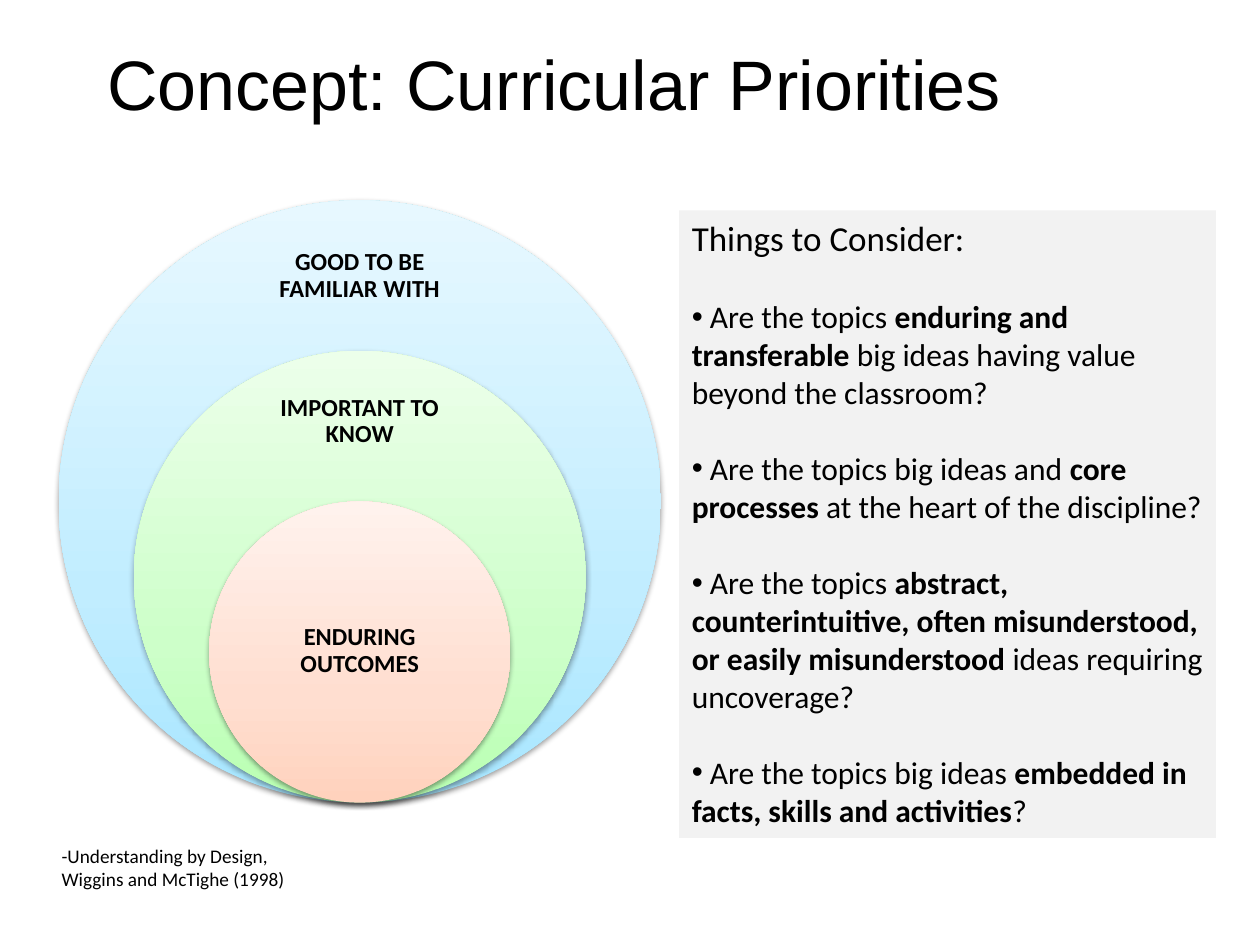
"""Build the Curricular Priorities slide: nested circles beside a list of questions."""
from lxml import etree
from pptx import Presentation
from pptx.dml.color import RGBColor
from pptx.enum.shapes import MSO_SHAPE
from pptx.enum.text import MSO_ANCHOR, MSO_AUTO_SIZE, PP_ALIGN
from pptx.oxml import parse_xml
from pptx.oxml.ns import nsdecls, qn
from pptx.util import Inches, Pt

OVAL = MSO_SHAPE.OVAL
TOP, MIDDLE = MSO_ANCHOR.TOP, MSO_ANCHOR.MIDDLE
LEFT, CENTER = PP_ALIGN.LEFT, PP_ALIGN.CENTER
NO_FIT = MSO_AUTO_SIZE.NONE

COLORS = {
    "text": "000000",
    "panel": "F2F2F2",
    "blue": ("A7E6FF", "C1EDFF", "E7F8FF"),
    "green": ("B9FFB2", "CDFFC9", "ECFFEA"),
    "peach": ("FFD2BD", "FFDED0", "FFF2ED"),
}
SHADOW = (
    f'<a:outerShdw {nsdecls("a")} blurRad="40000" dist="20000" dir="5400000" rotWithShape="0">'
    '<a:srgbClr val="000000"><a:alpha val="38000"/></a:srgbClr></a:outerShdw>'
)

prs = Presentation()
prs.slide_width, prs.slide_height = Inches(10), Inches(7.5)
COL, ROW = prs.slide_width / 100, prs.slide_height / 75
s = prs.slides.add_slide(prs.slide_layouts[1])


def place(sp, col, row, cols, rows):
    sp.left, sp.top = round(col * COL), round(row * ROW)
    sp.width, sp.height = round(cols * COL), round(rows * ROW)


def add_run(p, text, size, bold=False, font="Calibri"):
    r = p.add_run()
    r.text = text
    r.font.name, r.font.size, r.font.bold = font, Pt(size), bold
    r.font.color.rgb = RGBColor.from_string(COLORS["text"])


title = s.shapes.title
place(title, 7.5, 0.3, 85, 12.5)
tf = title.text_frame
tf.vertical_anchor, tf.auto_size = MIDDLE, NO_FIT
p = tf.paragraphs[0]
p.alignment = LEFT
add_run(p, "Concept: Curricular Priorities", 40, font="Arial")

# label boxes: top row, columns wide, rows high
AXIS, BASE, DIAMETER = 28.55, 63.7, 47.8
circles = [
    ("GOOD TO BE FAMILIAR WITH", "blue", 1, (18.3, 16.7, 7.2)),
    ("IMPORTANT TO KNOW", "green", 0.75, (30.1, 16.7, 6.7)),
    ("ENDURING OUTCOMES", "peach", 0.5, (45.7, 16.9, 11.9)),
]
for label, color, share, (row, cols, rows) in circles:
    d = DIAMETER * share
    sp = s.shapes.add_shape(OVAL, 0, 0, 0, 0)
    place(sp, AXIS - d / 2, BASE - d, d, d)
    sp.line.fill.background()
    sp.fill.gradient()
    sp.fill.gradient_angle = 90
    stops = sp.fill._fill._gradFill.find(qn("a:gsLst"))
    for gs in list(stops):
        stops.remove(gs)
    for pos, value in zip((0, 35000, 100000), COLORS[color]):
        gs = etree.SubElement(stops, qn("a:gs"), pos=str(pos))
        etree.SubElement(gs, qn("a:srgbClr"), val=value)
    sp.shadow.inherit = False
    sp._element.spPr.find(qn("a:effectLst")).append(parse_xml(SHADOW))

    box = s.shapes.add_textbox(0, 0, 0, 0)
    place(box, AXIS - cols / 2, row, cols, rows)
    tf = box.text_frame
    tf.word_wrap, tf.vertical_anchor = True, MIDDLE
    tf.margin_left = tf.margin_right = tf.margin_top = tf.margin_bottom = Inches(0.11)
    p = tf.paragraphs[0]
    p.alignment, p.line_spacing = CENTER, 0.9
    add_run(p, label, 14, True)

box = s.shapes.add_textbox(0, 0, 0, 0)
place(box, 3.9, 66.5, 43.2, 4.7)
tf = box.text_frame
tf.word_wrap = True
for i, line in enumerate(("-Understanding by Design,", "Wiggins and McTighe (1998)")):
    p = tf.add_paragraph() if i else tf.paragraphs[0]
    add_run(p, line, 11)

questions = [
    (" Are the topics ", "enduring and transferable ",
     "big ideas having value beyond the classroom?"),
    (" Are the topics big ideas and ", "core processes ",
     "at the heart of the discipline?"),
    (" Are the topics ",
     "abstract, counterintuitive, often misunderstood, or easily misunderstood ",
     "ideas requiring uncoverage?"),
    (" Are the topics big ideas ", "embedded in facts, skills and activities", "?"),
]
body = s.placeholders[1]
place(body, 53.9, 16.7, 42.6, 49.8)
body.fill.solid()
body.fill.fore_color.rgb = RGBColor.from_string(COLORS["panel"])
tf = body.text_frame
tf.word_wrap, tf.vertical_anchor, tf.auto_size = True, TOP, NO_FIT
for i, parts in enumerate([("Things to Consider:",), *questions]):
    p = tf.add_paragraph() if i else tf.paragraphs[0]
    p.space_before = Pt(22 if i else 0)
    pPr = p._p.get_or_add_pPr()
    pPr.set("marL", "0")
    pPr.set("indent", "0")
    if i:
        etree.SubElement(pPr, qn("a:buFont"), typeface="Arial")
        etree.SubElement(pPr, qn("a:buChar"), char="•")
    else:
        etree.SubElement(pPr, qn("a:buNone"))
    for j, text in enumerate(parts):
        add_run(p, text, 18 if i else 20, j == 1)

prs.save("out.pptx")
